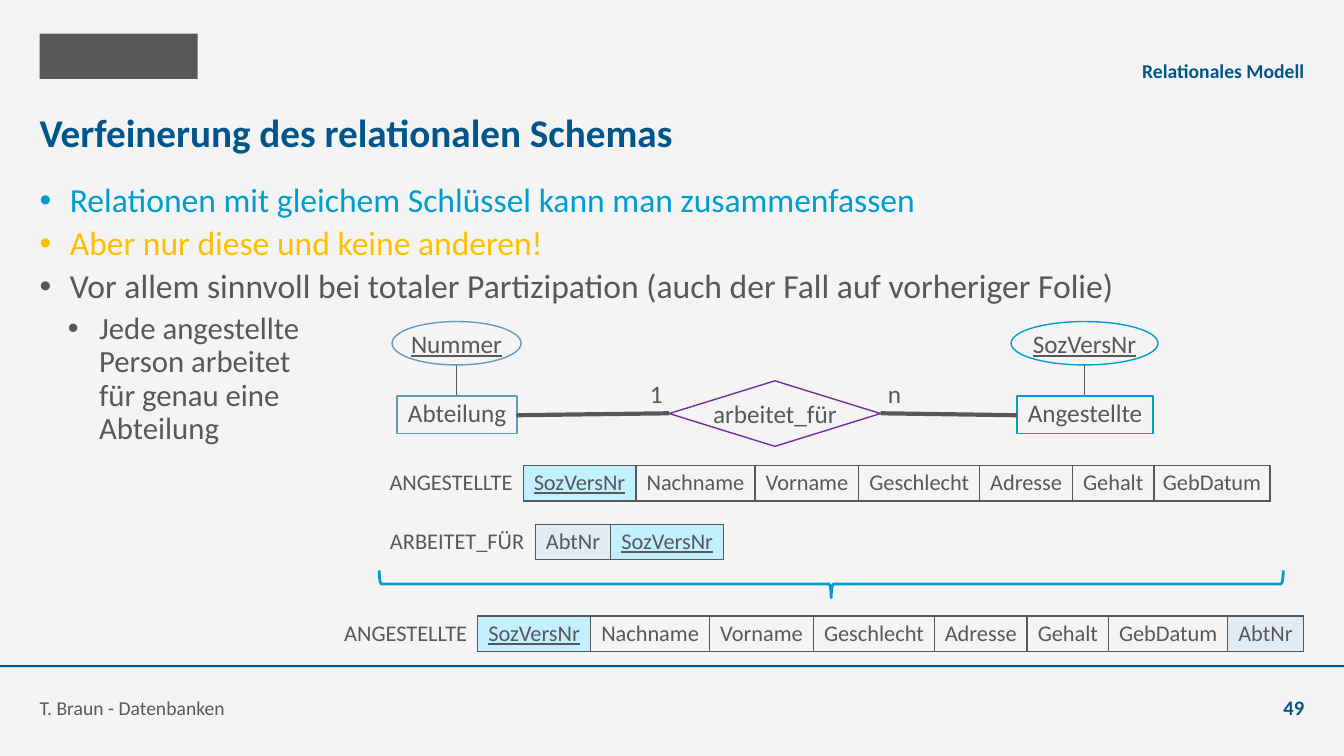
from lxml.etree import SubElement
from pptx import Presentation
from pptx.dml.color import RGBColor
from pptx.enum.shapes import MSO_CONNECTOR as Link, MSO_SHAPE as Shape
from pptx.enum.text import MSO_ANCHOR as Anchor, MSO_AUTO_SIZE as Fit, PP_ALIGN as Align
from pptx.oxml.ns import qn
from pptx.util import Pt

COLORS = {
    "page": "F4F4F4", "text": "58585A", "navy": "00568A", "cyan": "009DD1",
    "steel": "679AB9", "yellow": "FFC000", "purple": "7030A0",
    "key": "C3F0FF", "foreign": "E1EBF1",
}
WIDTHS = {
    "ANGESTELLTE": 103, "ARBEITET_FÜR": 111.6, "SozVersNr": 80.6, "Nachname": 85,
    "Vorname": 74.2, "Geschlecht": 86.4, "Adresse": 66.2, "Gehalt": 58.3,
    "GebDatum": 82.8, "AbtNr": 54,
}
FILLS = {"SozVersNr": "key", "AbtNr": "foreign"}
EMPLOYEE = ["ANGESTELLTE", "SozVersNr", "Nachname", "Vorname", "Geschlecht",
            "Adresse", "Gehalt", "GebDatum"]
BULLETS = [
    ("Relationen mit gleichem Schlüssel kann man zusammenfassen", "cyan", 0),
    ("Aber nur diese und keine anderen!", "yellow", 0),
    ("Vor allem sinnvoll bei totaler Partizipation (auch der Fall auf vorheriger Folie)", "text", 0),
    ("Jede angestellte \nPerson arbeitet \nfür genau eine \nAbteilung", "text", 1),
]
LEVELS = [{"size": 24, "left": 21.6, "hang": 21.6}, {"size": 22, "left": 42.5, "hang": 22.3}]


def color(name):
    """Return the named palette colour."""
    return RGBColor.from_string(COLORS[name])


def apply(target, values):
    """Set every attribute listed in values on target."""
    for name, value in values.items():
        setattr(target, name, value)


class SlideBuilder:
    """Holds the slide style and draws elements on the current page."""

    font = "Calibri"

    def __init__(self, deck):
        """Add a page with the plain background."""
        self.page = deck.slides.add_slide(deck.slide_layouts[1])
        self.page.background.fill.solid()
        self.page.background.fill.fore_color.rgb = color("page")

    def frame(self, frame, margins=(0, 0), anchor=Anchor.TOP, wrap=True):
        """Format a text frame with side and top margins."""
        side, top = map(Pt, margins)
        apply(frame, {"margin_left": side, "margin_right": side, "margin_top": top,
                      "margin_bottom": top, "vertical_anchor": anchor,
                      "word_wrap": wrap, "auto_size": Fit.NONE})

    def paragraph(self, para, text, size, ink="text", align=Align.LEFT, bold=False,
                  underline=False, spacing=1.0, before=0):
        """Fill a paragraph and format its spans."""
        para.text = text
        apply(para, {"alignment": align, "line_spacing": spacing, "space_before": Pt(before)})
        for span in para.runs:
            apply(span.font, {"name": self.font, "size": Pt(size), "bold": bold,
                              "underline": underline})
            span.font.color.rgb = color(ink)

    def place(self, holder, place):
        """Move a placeholder to the given place."""
        apply(holder, dict(zip(("left", "top", "width", "height"), map(Pt, place))))

    def title(self, text, place):
        """Fill the title placeholder."""
        holder = self.page.shapes.title
        self.place(holder, place)
        self.frame(holder.text_frame, anchor=Anchor.MIDDLE)
        self.paragraph(holder.text_frame.paragraphs[0], text, 28, "navy", bold=True)

    def bullets(self, items, place):
        """Fill the body placeholder with the bulleted list."""
        holder = self.page.placeholders[1]
        self.place(holder, place)
        self.frame(holder.text_frame)
        for index, (text, ink, level) in enumerate(items):
            frame, style = holder.text_frame, LEVELS[level]
            para = frame.add_paragraph() if index else frame.paragraphs[0]
            para.level = level
            self.paragraph(para, text, style["size"], ink, spacing=0.9, before=5)
            props = para._p.get_or_add_pPr()
            props.set("marL", str(Pt(style["left"])))
            props.set("indent", str(-Pt(style["hang"])))
            SubElement(props, qn("a:buFont"), typeface="Arial")
            SubElement(props, qn("a:buChar"), char="•")

    def label(self, text, place, size=14, margins=(0, 0), anchor=Anchor.BOTTOM,
              wrap=True, **style):
        """Add a text box."""
        box = self.page.shapes.add_textbox(*map(Pt, place))
        self.frame(box.text_frame, margins, anchor, wrap)
        self.paragraph(box.text_frame.paragraphs[0], text, size, **style)

    def shape(self, kind, place, fill=None, line=None, weight=1):
        """Add a preset shape without shadow."""
        box = self.page.shapes.add_shape(kind, *map(Pt, place))
        box.shadow.inherit = False
        if fill:
            box.fill.solid()
            box.fill.fore_color.rgb = color(fill)
        else:
            box.fill.background()
        if line:
            box.line.color.rgb = color(line)
            box.line.width = Pt(weight)
        else:
            box.line.fill.background()
        return box

    def node(self, kind, text, place, line, margins=(0, 0), anchor=Anchor.MIDDLE, **style):
        """Add a labelled diagram node."""
        box = self.shape(kind, place, "page", line)
        self.frame(box.text_frame, margins, anchor, wrap=False)
        self.paragraph(box.text_frame.paragraphs[0], text, 18, align=Align.CENTER, **style)

    def entity(self, name, place, key, key_place, line):
        """Add an entity with its key attribute above it."""
        left, top, width, height = key_place
        middle = left + width / 2
        self.link((middle, top + height), (middle, place[1]))
        self.node(Shape.RECTANGLE, name, place, line, (7.2, 3.6), Anchor.TOP, spacing=0.9)
        self.node(Shape.OVAL, key, key_place, line, underline=True)

    def link(self, start, end, weight=1):
        """Add a straight line."""
        line = self.page.shapes.add_connector(Link.STRAIGHT, *map(Pt, start + end))
        line.line.color.rgb = color("text")
        line.line.width = Pt(weight)
        SubElement(line._element.spPr, qn("a:effectLst"))

    def border(self, cell, sides):
        """Draw the named cell sides and clear the others."""
        props = cell._tc.get_or_add_tcPr()
        for side in "LRTB":
            edge = SubElement(props, qn(f"a:ln{side}"), w=str(Pt(1)))
            if side in sides:
                paint = SubElement(edge, qn("a:solidFill"))
                SubElement(paint, qn("a:srgbClr"), val=COLORS["text"])
            else:
                SubElement(edge, qn("a:noFill"))

    def relation(self, names, left, top, widths=WIDTHS):
        """Add a relation as a one-row table headed by its name."""
        total = sum(widths[name] for name in names)
        table = self.page.shapes.add_table(
            1, len(names), *map(Pt, (left, top, total, 25.2))).table
        apply(table, {"first_row": False, "horz_banding": False})
        for index, name in enumerate(names):
            table.columns[index].width = Pt(widths[name])
            cell = table.cell(0, index)
            apply(cell, {"margin_left": Pt(5.76), "margin_right": Pt(5.76),
                         "margin_top": Pt(2.88), "margin_bottom": Pt(2.88)})
            self.paragraph(cell.text_frame.paragraphs[0], name, 16, align=Align.CENTER,
                           underline=name == "SozVersNr")
            self.border(cell, "LRTB" if index else "R")
            if name in FILLS:
                cell.fill.solid()
                cell.fill.fore_color.rgb = color(FILLS[name])
            else:
                cell.fill.background()


def main():
    """Build the slide and save it."""
    deck = Presentation()
    apply(deck, {"slide_width": Pt(960), "slide_height": Pt(540)})
    slide = SlideBuilder(deck)
    slide.shape(Shape.RECTANGLE, (28.3, 24, 113, 32.4), "text")
    slide.shape(Shape.RECTANGLE, (0, 475, 960, 1.5), "navy")
    slide.title("Verfeinerung des relationalen Schemas", (28.3, 71.3, 903.6, 45.4))
    slide.bullets(BULLETS, (28.3, 131, 903.6, 334))
    slide.label("Relationales Modell", (283, 31, 648.7, 28), ink="navy", bold=True,
                align=Align.RIGHT)
    slide.label("T. Braun - Datenbanken", (28.3, 486, 662, 28))
    slide.label("49", (875, 486, 56.7, 28), 14.7, ink="navy", bold=True, align=Align.RIGHT)

    slide.relation(EMPLOYEE, 270.7, 332.6)
    slide.relation(["ARBEITET_FÜR", "AbtNr", "SozVersNr"], 270.7, 374.4)
    brace = slide.shape(Shape.RIGHT_BRACE, (584, 94.3, 19.4, 645.8), line="cyan", weight=2)
    brace.rotation = 90
    slide.relation(EMPLOYEE + ["AbtNr"], 238.3, 440, WIDTHS | {"GebDatum": 85})

    slide.entity("Angestellte", (726.5, 283, 97.2, 26.6),
                 "SozVersNr", (722.2, 229.7, 105, 31), "cyan")
    slide.entity("Abteilung", (283.7, 283, 85.7, 26.6),
                 "Nummer", (280, 229.7, 92.2, 31), "steel")
    slide.node(Shape.DIAMOND, "arbeitet_für", (478, 272, 151, 46.8), "purple")
    slide.link((369, 296.6), (478, 295.2), 3)
    slide.link((629, 295.2), (726.5, 296.6), 3)
    for text, left in (("1", 457.2), ("n", 627.1)):
        slide.label(text, (left, 266.4, 24.5, 28.8), 18, (7.2, 3.6), Anchor.TOP, False)
    deck.save("out.pptx")


if __name__ == "__main__":
    main()
